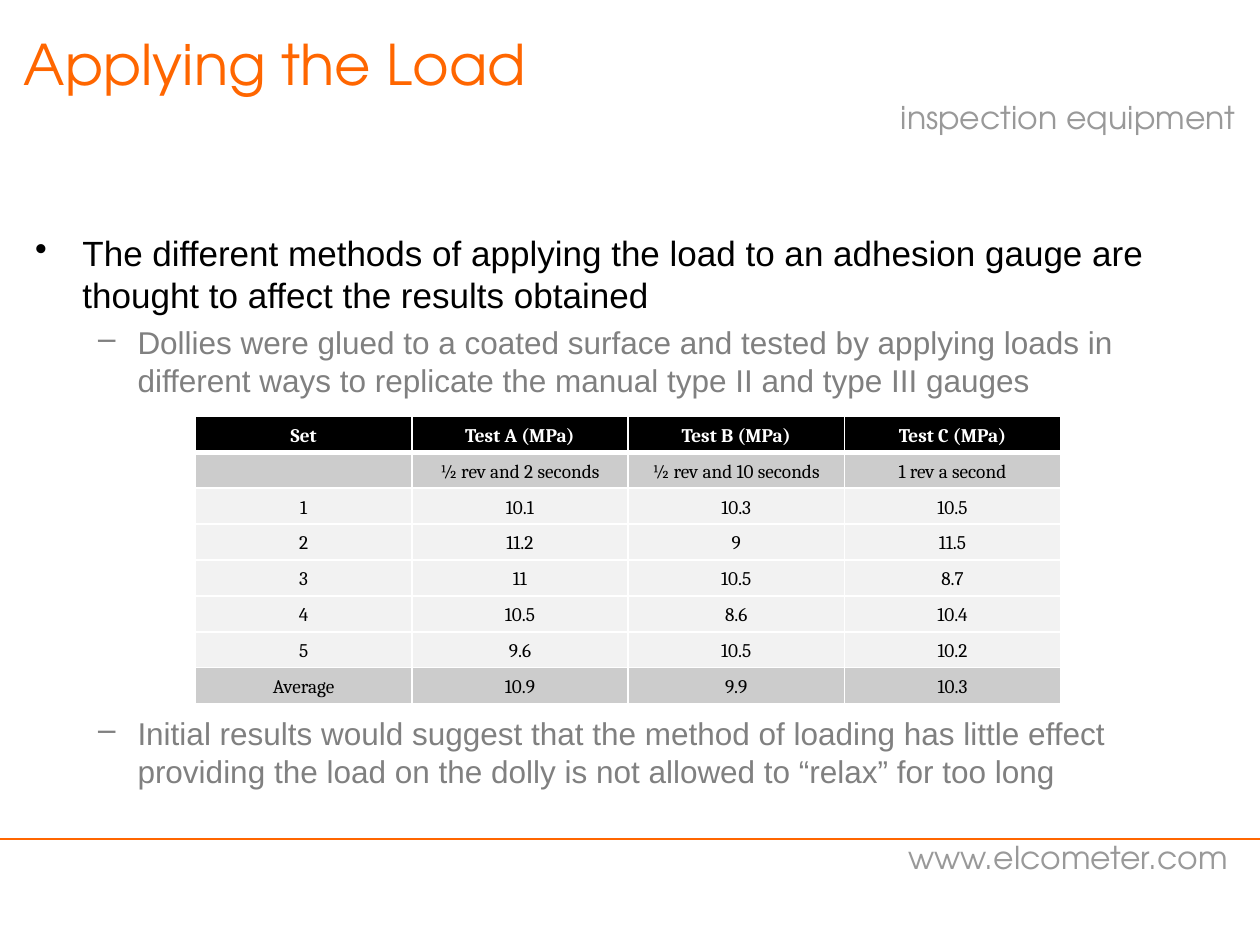
from pptx import Presentation
from pptx.dml.color import RGBColor
from pptx.enum import shapes, text
from pptx.oxml.ns import qn
from pptx.util import Pt

TITLE = "Applying the Load"
STRAPLINE = "inspection equipment"
WEBSITE = "www.elcometer.com"
# (level, space before in points, wording); the last point sits below the table
POINTS = [
    (0, 0, "The different methods of applying the load to an adhesion gauge "
           "are thought to affect the results obtained"),
    (1, 4, "Dollies were glued to a coated surface and tested by applying loads "
           "in different ways to replicate the manual type II and type III gauges"),
    (1, 180.5, "Initial results would suggest that the method of loading has little "
               "effect providing the load on the dolly is not allowed to “relax” "
               "for too long"),
]
RESULTS = [
    ("Set", "Test A (MPa)", "Test B (MPa)", "Test C (MPa)"),
    ("", "½ rev and 2 seconds", "½ rev and 10 seconds", "1 rev a second"),
    ("1", "10.1", "10.3", "10.5"),
    ("2", "11.2", "9", "11.5"),
    ("3", "11", "10.5", "8.7"),
    ("4", "10.5", "8.6", "10.4"),
    ("5", "9.6", "10.5", "10.2"),
    ("Average", "10.9", "9.9", "10.3"),
]
THEME = {
    "display": "TeX Gyre Adventor", "body": "Arial", "table": "Cambria",
    "orange": "FF6600", "grey": "999999", "black": "000000", "white": "FFFFFF",
    "band": "CCCCCC", "row": "F2F2F2",
    "title_size": 32, "brand_size": 18, "table_size": 11,
    # per level: size, colour, left margin, hanging indent, bullet
    "levels": [(20, "000000", 27, 27, "•"), (18, "808080", 58.5, 22.5, "–")],
}
SLIDE_W, SLIDE_H = 720, 540
RULE_Y = 479.5
TABLE_LEFT, TABLE_TOP, COLUMN_W, ROW_H = 111.75, 237.9, 123.6, 20.55


def rgb(name):
    return RGBColor.from_string(THEME.get(name, name))


def style(font, family, size, colour, bold=False):
    font.name, font.size, font.bold = THEME[family], Pt(size), bold
    font.color.rgb = rgb(colour)


def add_text(slide, left, top, width, height, anchor=text.MSO_ANCHOR.TOP):
    frame = slide.shapes.add_textbox(Pt(left), Pt(top), Pt(width), Pt(height)).text_frame
    frame.word_wrap = True
    frame.vertical_anchor = anchor
    return frame


def add_brand_line(slide, wording, left, top):
    paragraph = add_text(slide, left, top, 214, 39).paragraphs[0]
    paragraph.text = wording
    style(paragraph.font, "display", THEME["brand_size"], "grey")


def add_rule(slide):
    rule = slide.shapes.add_connector(
        shapes.MSO_CONNECTOR.STRAIGHT, Pt(SLIDE_W), Pt(RULE_Y), Pt(0), Pt(RULE_Y))
    rule.line.color.rgb = rgb("orange")
    rule.line.width = Pt(0.75)
    properties = rule._element.spPr
    properties.append(properties.makeelement(qn("a:effectLst"), {}))


def add_points(slide):
    frame = add_text(slide, 13, 128.9, 692, 341)
    for index, (level, gap, wording) in enumerate(POINTS):
        paragraph = frame.add_paragraph() if index else frame.paragraphs[0]
        size, colour, margin, hanging, bullet = THEME["levels"][level]
        paragraph.text, paragraph.level = wording, level
        paragraph.space_before = Pt(gap)
        properties = paragraph._p.get_or_add_pPr()
        properties.set("marL", str(Pt(margin)))
        properties.set("indent", str(-Pt(hanging)))
        properties.append(properties.makeelement(qn("a:buChar"), {"char": bullet}))
        style(paragraph.font, "body", size, colour)


def add_border(cell, side, width):
    properties = cell._tc.get_or_add_tcPr()
    border = properties.makeelement(qn(f"a:{side}"), {"w": str(Pt(width))})
    fill = border.makeelement(qn("a:solidFill"), {})
    fill.append(fill.makeelement(qn("a:srgbClr"), {"val": THEME["white"]}))
    border.append(fill)
    properties.append(border)


def add_results(slide):
    rows, columns = len(RESULTS), len(RESULTS[0])
    table = slide.shapes.add_table(
        rows, columns, Pt(TABLE_LEFT), Pt(TABLE_TOP),
        Pt(columns * COLUMN_W), Pt(rows * ROW_H)).table
    for column in table.columns:
        column.width = Pt(COLUMN_W)
    for r, values in enumerate(RESULTS):
        table.rows[r].height = Pt(ROW_H)
        header = r == 0
        fill = "black" if header else "band" if r in (1, rows - 1) else "row"
        for c, value in enumerate(values):
            cell = table.cell(r, c)
            cell.margin_left = cell.margin_right = Pt(5)
            cell.margin_top = cell.margin_bottom = 0
            cell.vertical_anchor = text.MSO_ANCHOR.MIDDLE
            for side in ("lnL", "lnR", "lnT", "lnB"):
                thick = (header and side == "lnB") or (r == 1 and side == "lnT")
                add_border(cell, side, 3 if thick else 1)
            cell.fill.solid()
            cell.fill.fore_color.rgb = rgb(fill)
            paragraph = cell.text_frame.paragraphs[0]
            paragraph.text = value
            paragraph.alignment = text.PP_ALIGN.CENTER
            paragraph.line_spacing = 1.15
            style(paragraph.font, "table", THEME["table_size"],
                  "white" if header else "black", header)


def add_title(slide):
    frame = add_text(slide, 6.5, 12.2, 705, 48, text.MSO_ANCHOR.MIDDLE)
    frame.text = TITLE
    style(frame.paragraphs[0].font, "display", THEME["title_size"], "orange")


def main():
    deck = Presentation()
    deck.slide_width, deck.slide_height = Pt(SLIDE_W), Pt(SLIDE_H)
    slide = deck.slides.add_slide(deck.slide_layouts[6])
    add_brand_line(slide, STRAPLINE, 507.6, 52.6)
    add_rule(slide)
    add_brand_line(slide, WEBSITE, 511.9, 475.2)
    add_points(slide)
    add_title(slide)
    add_results(slide)
    deck.save("out.pptx")


if __name__ == "__main__":
    main()
